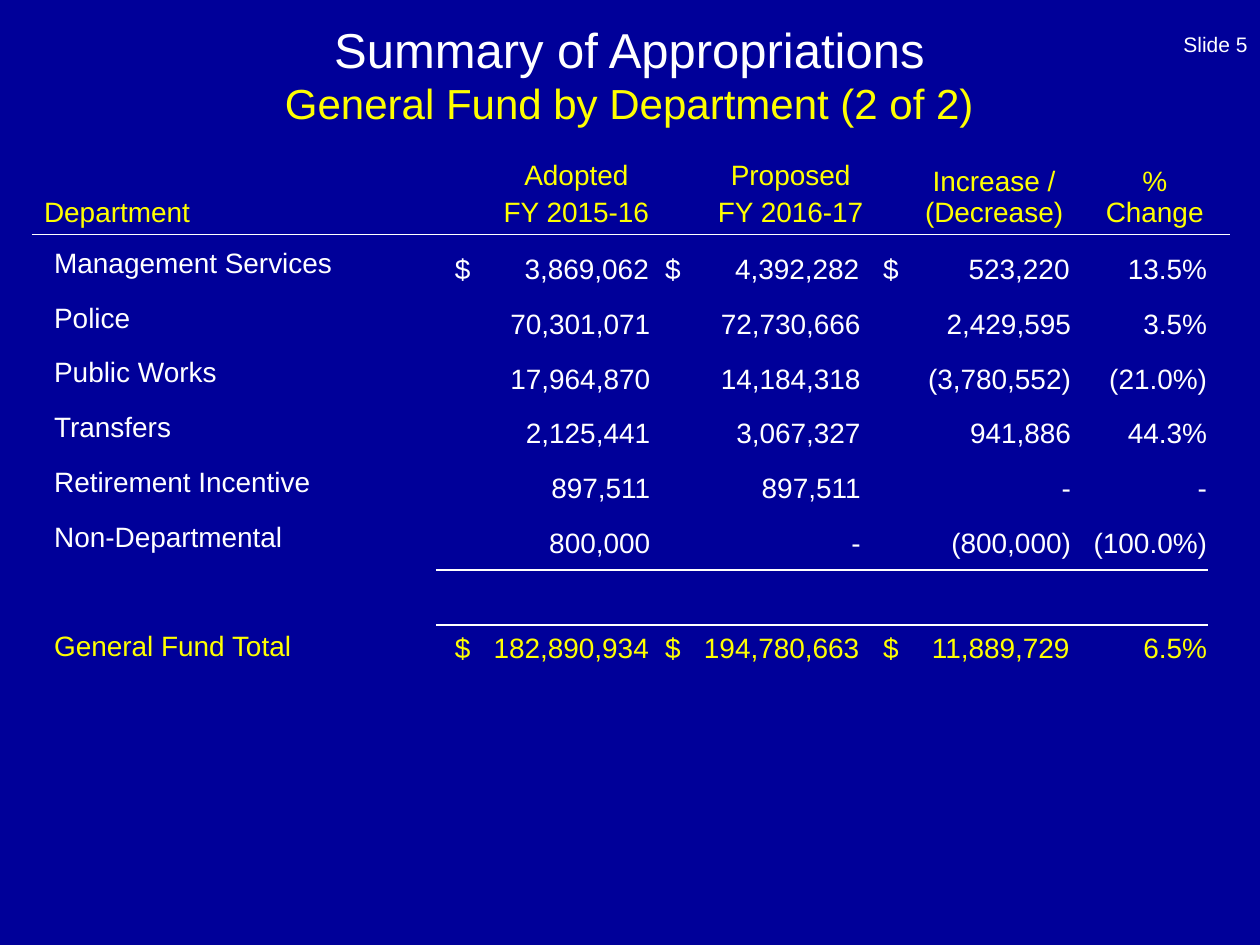
from dataclasses import dataclass
from lxml import etree
from pptx import Presentation
from pptx.dml.color import RGBColor
from pptx.enum import text as t
from pptx.oxml import ns
from pptx.util import Inches, Pt


@dataclass(frozen=True)
class Theme:
    """Colours, font and type sizes of the slide."""
    back: str = "000099"
    white: str = "FFFFFF"
    gold: str = "FFFF00"
    font: str = "Arial"
    title: int = 28
    sub: int = 24
    body: int = 16
    note: int = 12


THEME = Theme()
PLAIN = "{2D5ABB26-0587-4C30-8999-92F81FD0307C}"
LEFT, MID, RIGHT = t.PP_ALIGN.LEFT, t.PP_ALIGN.CENTER, t.PP_ALIGN.RIGHT

HEADS = ["Department", "Adopted\nFY 2015-16", "Proposed\nFY 2016-17",
         "Increase / (Decrease)", "% Change"]
ROWS = [
    ["Management Services", "$\t3,869,062", "$\t4,392,282", "$\t523,220", "13.5%"],
    ["Police", "70,301,071", "72,730,666", "2,429,595", "3.5%"],
    ["Public Works", "17,964,870", "14,184,318", "(3,780,552)", "(21.0%)"],
    ["Transfers", "2,125,441", "3,067,327", "941,886", "44.3%"],
    ["Retirement Incentive", "897,511", "897,511", "-", "-"],
    ["Non-Departmental", "800,000", "-", "(800,000)", "(100.0%)"],
    [""] * 5,
    ["General Fund Total", "$\t182,890,934", "$\t194,780,663", "$\t11,889,729", "6.5%"],
]
DOLLAR = {1: 0.15, 2: 0.11, 3: 0.17}


def style(run, size, color):
    """Give a run its font, size and colour."""
    run.font.name = THEME.font
    run.font.size = Pt(size)
    run.font.color.rgb = RGBColor.from_string(color)


def add_text(slide, box, words, align, anchor):
    """Place one paragraph of (words, size, colour) lines in a box."""
    frame = slide.shapes.add_textbox(*map(Inches, box)).text_frame
    frame.word_wrap = True
    frame.vertical_anchor = anchor
    para = frame.paragraphs[0]
    para.text = "\v".join(line for line, _, _ in words)
    para.alignment = align
    for run, (_, size, color) in zip(para.runs, words):
        style(run, size, color)


def add_grid(slide, box, cols, rows):
    """Add a table without style, with given column widths and row heights."""
    frame = slide.shapes.add_table(len(rows), len(cols), *map(Inches, box))
    grid = frame.table
    grid.first_row = grid.horz_banding = False
    grid._tbl.tblPr.find(ns.qn("a:tableStyleId")).text = PLAIN
    for col, width in zip(grid.columns, cols):
        col.width = Inches(width)
    for row, height in zip(grid.rows, rows):
        row.height = Inches(height)
    return grid


def rule(cell, side):
    """Draw a thin white line on one side of a cell."""
    line = etree.SubElement(cell._tc.get_or_add_tcPr(), ns.qn("a:ln" + side), w=str(Pt(1)))
    fill = etree.SubElement(line, ns.qn("a:solidFill"))
    etree.SubElement(fill, ns.qn("a:srgbClr"), val=THEME.white)


def fill_cell(cell, words, color, align, anchor):
    """Write the words into a clear cell, one paragraph per line."""
    cell.fill.background()
    cell.vertical_anchor = anchor
    cell.text = words
    for i, para in enumerate(cell.text_frame.paragraphs):
        para.alignment = align
        if i:
            para.space_before = Pt(3)
        for run in para.runs:
            style(run, THEME.body, color)
        if not words:
            etree.SubElement(para._p, ns.qn("a:endParaRPr"), sz=str(THEME.body * 100))


def add_heads(slide, box):
    """Place the column heads with a line below them."""
    grid = add_grid(slide, box, [3.56, 1.53, 1.87, 1.36, 1.19], [0.69, 0.37])
    for c, head in enumerate(HEADS):
        top, low = grid.cell(0, c), grid.cell(1, c)
        rule(top, "B")
        rule(low, "T")
        fill_cell(top, head, THEME.gold, MID if c else LEFT, t.MSO_ANCHOR.BOTTOM)
        fill_cell(low, "", THEME.gold, LEFT, t.MSO_ANCHOR.TOP)


def set_sum(cell, pad, width):
    """Set a dollar sign at the left and a right tab for the sum."""
    cell.margin_left = Inches(pad)
    props = cell.text_frame.paragraphs[0]._p.get_or_add_pPr()
    tabs = etree.SubElement(props, ns.qn("a:tabLst"))
    etree.SubElement(tabs, ns.qn("a:tab"), pos=str(Inches(width - pad - 0.02)), algn="r")


def add_funds(slide, box):
    """Place the sums by department and the total."""
    cols = [3.13, 1.71, 1.67, 1.67, 1.08]
    last = len(ROWS) - 1
    grid = add_grid(slide, box, cols, [3.04 / last] * last + [0.37])
    for r, row in enumerate(ROWS):
        color = THEME.gold if r == last else THEME.white
        for c, words in enumerate(row):
            cell = grid.cell(r, c)
            if c and r in (last - 2, last - 1):
                rule(cell, "B" if r == last - 2 else "T")
            if not c:
                fill_cell(cell, words, color, LEFT, t.MSO_ANCHOR.TOP)
                continue
            cell.margin_left = cell.margin_right = cell.margin_top = Inches(0.01)
            cell.margin_bottom = 0
            has_sign = "\t" in words
            fill_cell(cell, words, color, LEFT if has_sign else RIGHT, t.MSO_ANCHOR.MIDDLE)
            if has_sign:
                set_sum(cell, DOLLAR[c], cols[c])


def main():
    """Build and save the slide."""
    deck = Presentation()
    deck.slide_width, deck.slide_height = Inches(10), Inches(7.5)
    slide = deck.slides.add_slide(deck.slide_layouts[6])
    slide.background.fill.solid()
    slide.background.fill.fore_color.rgb = RGBColor.from_string(THEME.back)
    add_text(slide, (7.67, 0, 2.33, 0.5), [("Slide 5", THEME.note, THEME.white)],
             RIGHT, t.MSO_ANCHOR.BOTTOM)
    add_text(slide, (0.33, 0.25, 9.33, 0.67),
             [("Summary of Appropriations", THEME.title, THEME.white),
              ("General Fund by Department (2 of 2)", THEME.sub, THEME.gold)],
             MID, t.MSO_ANCHOR.MIDDLE)
    add_heads(slide, (0.25, 1.17, 9.5, 1.06))
    add_funds(slide, (0.33, 1.92, 9.25, 3.41))
    deck.save("out.pptx")


if __name__ == "__main__":
    main()
